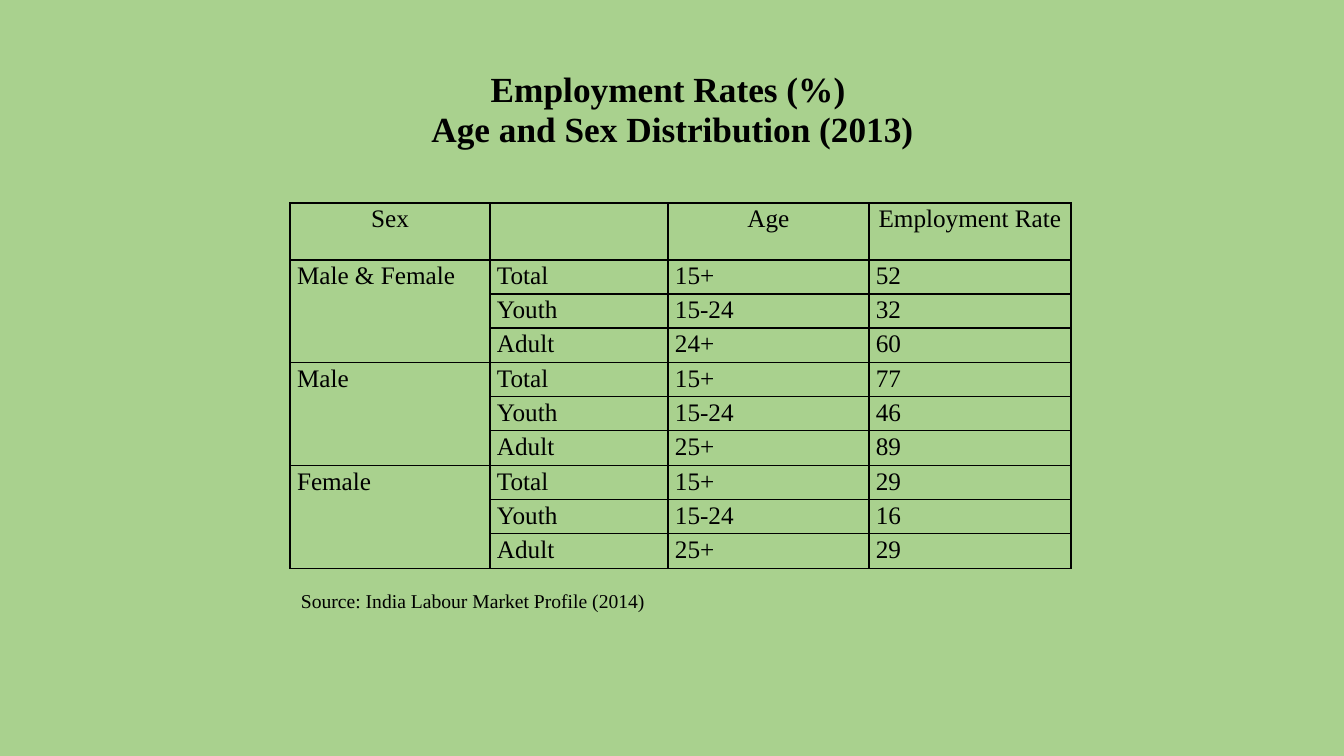
import pptx
import pptx.dml.color
import pptx.enum.text
import pptx.oxml
import pptx.oxml.ns
import pptx.util

PX = 914400 / 100.8
THEME = {
    "font": "Times New Roman",
    "background": pptx.dml.color.RGBColor.from_string("A9D18E"),
    "ink": pptx.dml.color.RGBColor.from_string("000000"),
    "title": 25.2,
    "body": 18,
    "source": 14,
}
ALIGN = pptx.enum.text.PP_ALIGN
MIDDLE = pptx.enum.text.MSO_ANCHOR.MIDDLE


def px(*lengths):
    return [pptx.util.Emu(round(length * PX)) for length in lengths]


def add_run(paragraph, text, size, bold=False):
    run = paragraph.add_run()
    run.text = text
    run.font.name = THEME["font"]
    run.font.size = pptx.util.Pt(THEME[size])
    run.font.bold = bold
    run.font.color.rgb = THEME["ink"]


deck = pptx.Presentation()
deck.slide_width, deck.slide_height = px(1344, 756)
slide = deck.slides.add_slide(deck.slide_layouts[6])
slide.background.fill.solid()
slide.background.fill.fore_color.rgb = THEME["background"]

# Title
title = slide.shapes.add_textbox(*px(93, 52, 1159, 117)).text_frame
title.word_wrap = True
title.vertical_anchor = MIDDLE
heading = title.paragraphs[0]
heading.alignment = ALIGN.CENTER
heading.line_spacing = 0.94
add_run(heading, "Employment Rates (%) ", "title", bold=True)
heading.add_line_break()
add_run(heading, "Age and Sex Distribution (2013)", "title", bold=True)

# Employment table: one header row, then three age rows for each sex
groups = {
    "Male & Female": [("Total", "15+", "52"), ("Youth", "15-24", "32"), ("Adult", "24+", "60")],
    "Male": [("Total", "15+", "77"), ("Youth", "15-24", "46"), ("Adult", "25+", "89")],
    "Female": [("Total", "15+", "29"), ("Youth", "15-24", "16"), ("Adult", "25+", "29")],
}
rows = [("Sex", "", "Age", "Employment Rate")]
for sex, ages in groups.items():
    for index, age in enumerate(ages):
        rows.append((sex if index == 0 else "", *age))
column_widths = [200, 178, 201, 202]
row_heights = [57] + [34, 34, 35] * len(groups)

rates = slide.shapes.add_table(
    len(rows), len(column_widths), *px(290, 203, sum(column_widths), sum(row_heights))
).table
rates.first_row = rates.horz_banding = False
for column, width in zip(rates.columns, px(*column_widths)):
    column.width = width
for row, height in zip(rates.rows, px(*row_heights)):
    row.height = height

for r, values in enumerate(rows):
    for c, value in enumerate(values):
        cell = rates.cell(r, c)
        cell.margin_left, cell.margin_right, cell.margin_top, cell.margin_bottom = px(7, 7, 0, 0)
        properties = cell._tc.get_or_add_tcPr()
        for side in ("lnL", "lnR", "lnT", "lnB"):
            properties.append(pptx.oxml.parse_xml(
                f'<a:{side} {pptx.oxml.ns.nsdecls("a")} w="12700"><a:solidFill>'
                f'<a:srgbClr val="{THEME["ink"]}"/></a:solidFill></a:{side}>'
            ))
        cell.fill.background()
        if value:
            paragraph = cell.text_frame.paragraphs[0]
            paragraph.alignment = ALIGN.CENTER if r == 0 else ALIGN.JUSTIFY
            paragraph.line_spacing = 1.07
            add_run(paragraph, value, "body")

for first in range(1, len(rows), 3):
    rates.cell(first, 0).merge(rates.cell(first + 2, 0))

# Source line
source = slide.shapes.add_textbox(*px(291, 578, 699, 45)).text_frame
source.word_wrap = True
source.vertical_anchor = MIDDLE
add_run(source.paragraphs[0], "Source: India Labour Market Profile (2014)", "source")

deck.save("out.pptx")
